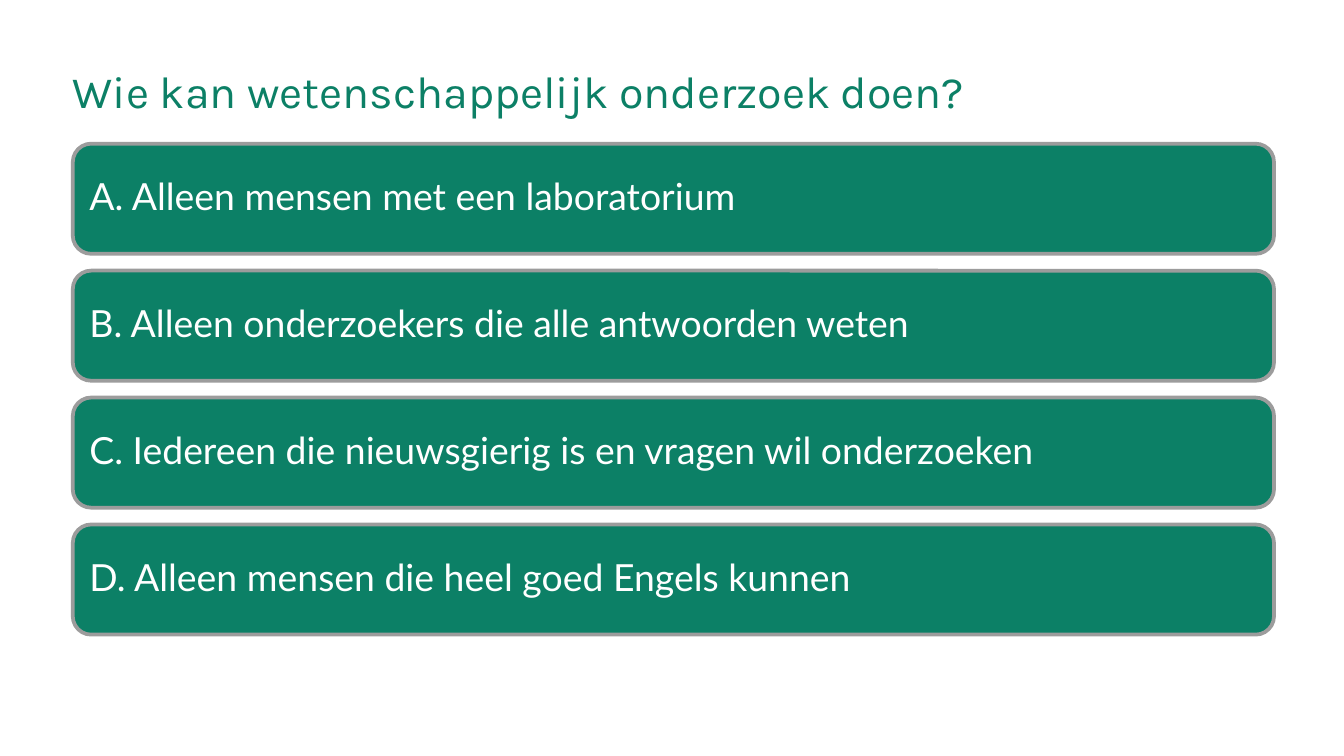
"""Build a quiz slide with a question and four answer bars."""
import pptx
import pptx.dml.color
import pptx.enum.shapes
import pptx.enum.text
import pptx.util

Pt = pptx.util.Pt
COLORS = {"green": "0C8066", "grey": "9C9C9C", "white": "FFFFFF"}
LEFT, WIDTH = 39, 643.5
ANSWERS = [
    "A. Alleen mensen met een laboratorium",
    "B. Alleen onderzoekers die alle antwoorden weten",
    "C. Iedereen die nieuwsgierig is en vragen wil onderzoeken",
    "D. Alleen mensen die heel goed Engels kunnen",
]


class QuizSlide:
    """Hold the quiz style and the current slide."""

    def __init__(self, slide):
        """Keep the slide and paint its background."""
        self.slide = slide
        slide.background.fill.solid()
        slide.background.fill.fore_color.rgb = self.color("white")

    def color(self, name):
        """Return a named colour."""
        return pptx.dml.color.RGBColor.from_string(COLORS[name])

    def set_text(self, frame, text, font, size, color, spacing, anchor, inset):
        """Set and format one left-aligned paragraph."""
        frame.text = text
        frame.word_wrap = True
        frame.auto_size = pptx.enum.text.MSO_AUTO_SIZE.NONE
        frame.vertical_anchor = anchor
        frame.margin_left = frame.margin_right = Pt(inset)
        frame.margin_top = frame.margin_bottom = Pt(inset)
        paragraph = frame.paragraphs[0]
        paragraph.alignment = pptx.enum.text.PP_ALIGN.LEFT
        paragraph.line_spacing = spacing
        for run in paragraph.runs:
            run.font.name = font
            run.font.size = Pt(size)
            run.font.color.rgb = self.color(color)

    def question(self, text, top, height):
        """Fill the title placeholder with the question."""
        title = self.slide.shapes.title
        title.left, title.top = Pt(LEFT), Pt(top)
        title.width, title.height = Pt(WIDTH), Pt(height)
        self.set_text(title.text_frame, text, "Karla", 24, "green", Pt(32),
                      pptx.enum.text.MSO_ANCHOR.TOP, 0)

    def answer(self, text, top, height):
        """Add one rounded answer bar."""
        bar = self.slide.shapes.add_shape(
            pptx.enum.shapes.MSO_SHAPE.ROUNDED_RECTANGLE,
            Pt(LEFT), Pt(top), Pt(WIDTH), Pt(height))
        bar.shadow.inherit = False
        bar.fill.solid()
        bar.fill.fore_color.rgb = self.color("green")
        bar.line.color.rgb = self.color("grey")
        bar.line.width = Pt(2)
        self.set_text(bar.text_frame, text, "Lato", 20, "white", 0.9,
                      pptx.enum.text.MSO_ANCHOR.MIDDLE, 6)


def main():
    """Create and save the presentation."""
    presentation = pptx.Presentation()
    presentation.slide_width, presentation.slide_height = Pt(720), Pt(405)
    quiz = QuizSlide(presentation.slides.add_slide(presentation.slide_layouts[5]))
    quiz.question("Wie kan wetenschappelijk onderzoek doen?", 31, 45)
    for row, answer in enumerate(ANSWERS):
        quiz.answer(answer, 77 + 68 * row, 59)
    presentation.save("out.pptx")


if __name__ == "__main__":
    main()
